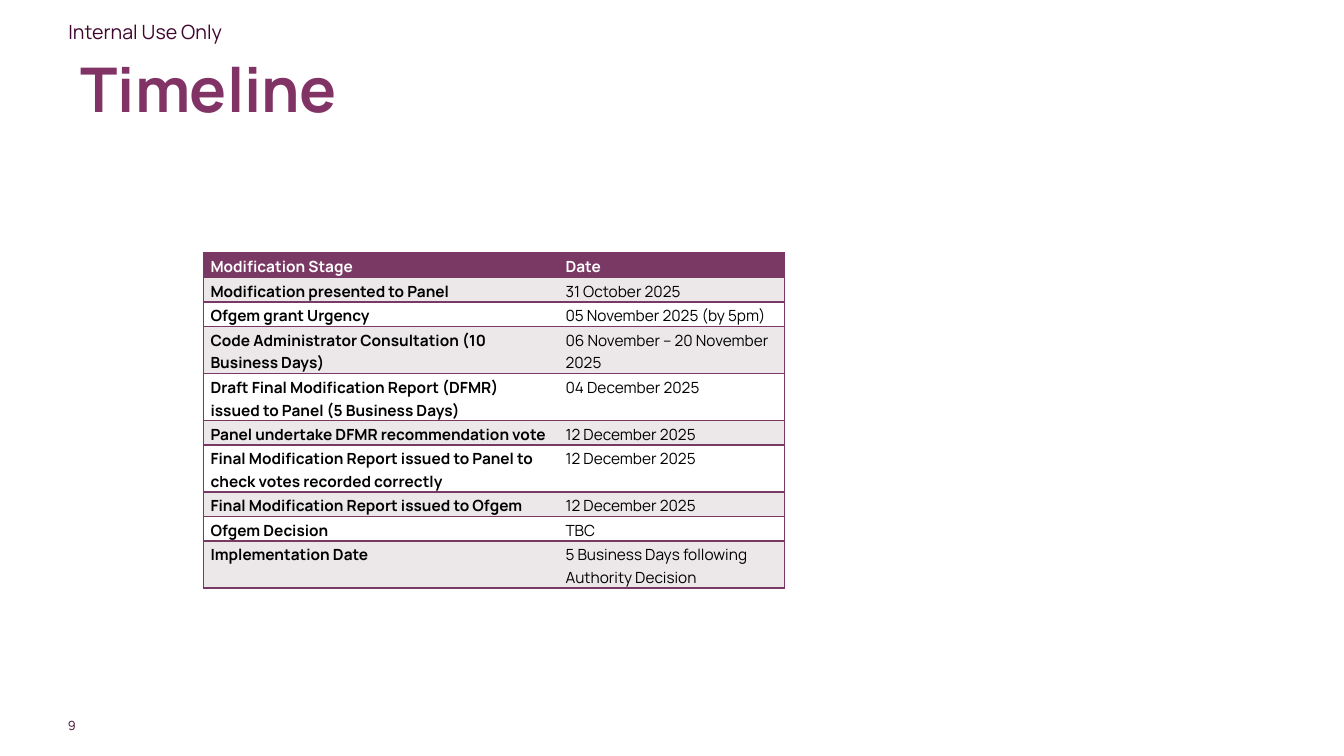
"""Builds the modification timeline slide with its table of stages and dates."""
from lxml.etree import SubElement
from pptx import Presentation
from pptx.dml.color import RGBColor
from pptx.enum.text import MSO_ANCHOR as Anchor, PP_ALIGN as Align
from pptx.oxml.ns import qn
from pptx.util import Pt

PLUM, DARK, BLACK, WHITE, GREY = "7A3864", "3F0730", "000000", "FFFFFF", "ECE8EA"


def write(frame, text, size=11, color=BLACK, bold=False, align=Align.LEFT, spacing=None, after=None):
    paragraph = frame.paragraphs[0]
    paragraph.alignment = align
    paragraph.line_spacing = spacing
    paragraph.space_after = after
    run = paragraph.add_run()
    run.text = text
    run.font.name = "Manrope"
    run.font.size = Pt(size)
    run.font.bold = bold
    run.font.color.rgb = RGBColor.from_string(color)


def set_border(cell, side, color):
    line = SubElement(cell._tc.get_or_add_tcPr(), qn(f"a:ln{side}"), w=str(Pt(1)))
    if color:
        fill = SubElement(line, qn("a:solidFill"))
        SubElement(fill, qn("a:srgbClr"), val=color)
    else:
        SubElement(line, qn("a:noFill"))


presentation = Presentation()
presentation.slide_width, presentation.slide_height = Pt(960), Pt(540)
slide = presentation.slides.add_slide(presentation.slide_layouts[6])

number = slide.shapes.add_textbox(Pt(41), Pt(512.6), Pt(13), Pt(10.8)).text_frame
number.margin_left = number.margin_top = number.margin_right = number.margin_bottom = 0
number.vertical_anchor = Anchor.MIDDLE
number.word_wrap = False
write(number, "9", size=9, color=DARK, align=Align.RIGHT)

marking = slide.shapes.add_textbox(Pt(41.8), Pt(10.8), Pt(360), Pt(24.5)).text_frame
marking.word_wrap = True
write(marking, "Internal Use Only", size=14, color=DARK)

title = slide.shapes.add_textbox(Pt(50.4), Pt(28.8), Pt(764.6), Pt(68.4)).text_frame
title.word_wrap = True
title.vertical_anchor = Anchor.MIDDLE
write(title, "Timeline", size=44, color="813366", bold=True)

ONE_LINE, TWO_LINES = 17.5, 33.6
stages = [
    ("Modification Stage", "Date", ONE_LINE),
    ("Modification presented to Panel", "31 October 2025", ONE_LINE),
    ("Ofgem grant Urgency", "05 November 2025 (by 5pm)", ONE_LINE),
    ("Code Administrator Consultation (10 Business Days)", "06 November – 20 November 2025", TWO_LINES),
    ("Draft Final Modification Report (DFMR) issued to Panel (5 Business Days)", "04 December 2025", TWO_LINES),
    ("Panel undertake DFMR recommendation vote", "12 December 2025", ONE_LINE),
    ("Final Modification Report issued to Panel to check votes recorded correctly", "12 December 2025", TWO_LINES),
    ("Final Modification Report issued to Ofgem", "12 December 2025", ONE_LINE),
    ("Ofgem Decision", "TBC", ONE_LINE),
    ("Implementation Date", "5 Business Days following Authority Decision", TWO_LINES),
]
table_height = sum(height for _, _, height in stages)
table = slide.shapes.add_table(len(stages), 2, Pt(145.4), Pt(180.7), Pt(415), Pt(table_height)).table
table.columns[0].width, table.columns[1].width = Pt(253.6), Pt(161.4)

for row, (stage, date, height) in enumerate(stages):
    table.rows[row].height = Pt(height)
    header = row == 0
    background = PLUM if header else GREY if row % 2 else WHITE
    for column, text in enumerate((stage, date)):
        cell = table.cell(row, column)
        cell.margin_left, cell.margin_right = Pt(5), Pt(5.8)
        cell.margin_top, cell.margin_bottom = Pt(1.4), 0
        set_border(cell, "L", None if column else PLUM)
        set_border(cell, "R", PLUM if column else None)
        set_border(cell, "T", PLUM)
        set_border(cell, "B", PLUM)
        cell.fill.solid()
        cell.fill.fore_color.rgb = RGBColor.from_string(background)
        write(cell.text_frame, text, color=WHITE if header else BLACK,
              bold=header or column == 0, spacing=1.07, after=Pt(8))

presentation.save("out.pptx")
